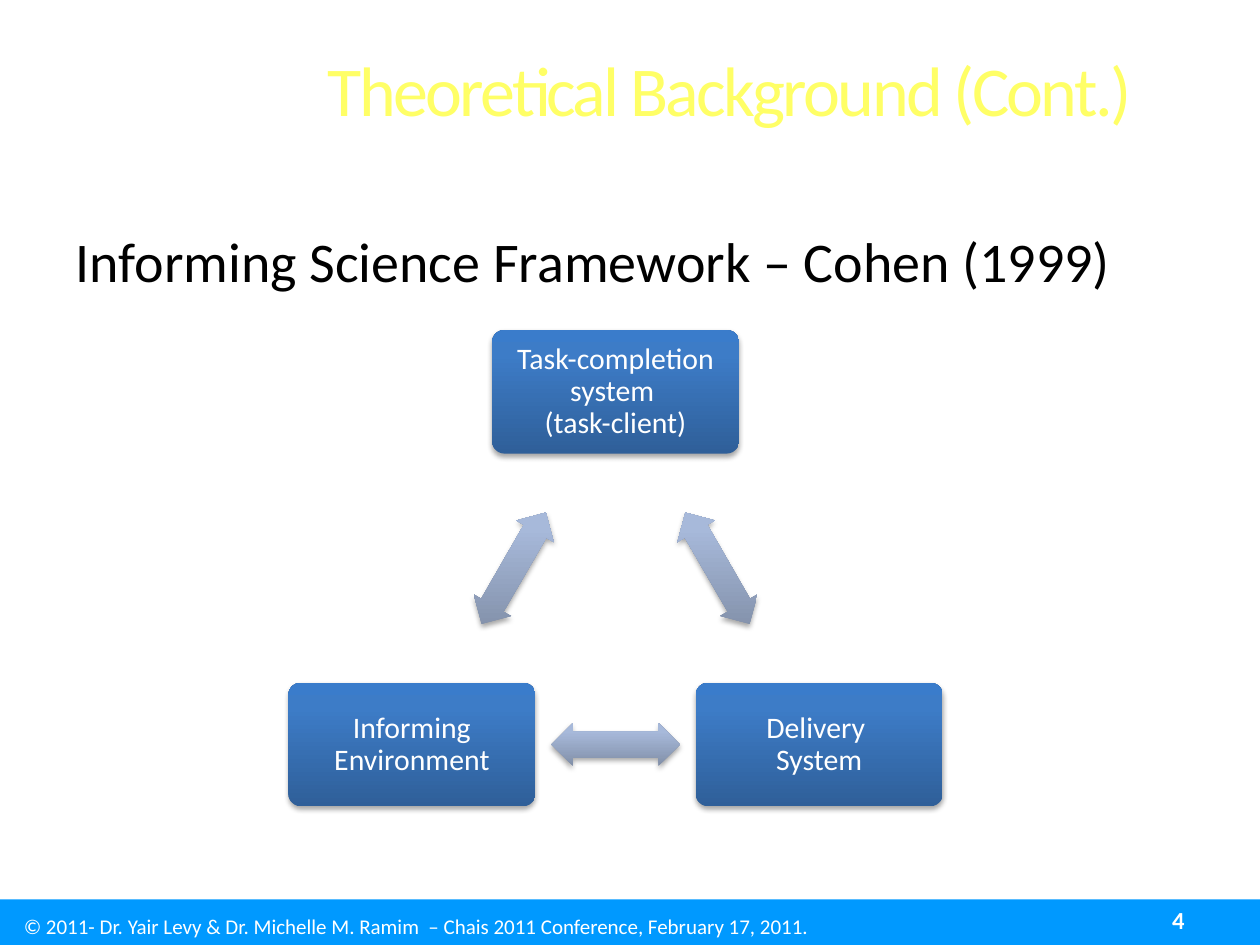
import math

import pptx
import pptx.dml.color
import pptx.enum.shapes
import pptx.enum.text
import pptx.oxml.ns
import pptx.util
from lxml import etree

Cm = pptx.util.Cm
Pt = pptx.util.Pt
RGBColor = pptx.dml.color.RGBColor
MSO_SHAPE = pptx.enum.shapes.MSO_SHAPE
ALIGN = pptx.enum.text.PP_ALIGN
ANCHOR = pptx.enum.text.MSO_ANCHOR
qn = pptx.oxml.ns.qn

# Content
TITLE = "Theoretical Background (Cont.)"
FRAMEWORK = "Informing Science Framework – Cohen (1999)"
COMPONENTS = ["Task-completion system \v(task-client)", "Delivery \vSystem",
              "Informing Environment"]
COPYRIGHT = ("© 2011- Dr. Yair Levy & Dr. Michelle M. Ramim  – "
             "Chais 2011 Conference, February 17, 2011.")
PAGE_NUMBER = "4"

# Style
FONT = "Calibri"
WHITE = RGBColor(0xFF, 0xFF, 0xFF)
BLACK = RGBColor(0, 0, 0)
YELLOW = RGBColor(0xFF, 0xFF, 0x66)
FOOTER_BLUE = RGBColor(0x00, 0x99, 0xFF)
BOX_STOPS = [(0, RGBColor(0x2F, 0x5F, 0x99)), (80, RGBColor(0x3D, 0x7C, 0xC7)),
             (100, RGBColor(0x3A, 0x7C, 0xCB))]
ARROW_STOPS = [(0, RGBColor(0x81, 0x8F, 0xA8)), (80, RGBColor(0xA7, 0xB9, 0xDA)),
               (100, RGBColor(0xA7, 0xBA, 0xDC))]

# Cycle geometry, in cm
CENTER_X, CENTER_Y, RADIUS = 12.41, 12.64, 4.74
BOX_SIZE = (4.98, 2.49)
ARROW_SIZE = (2.59, 0.87)


def write(shape, text, size, color, align=ALIGN.LEFT, anchor=ANCHOR.TOP, bold=False):
    frame = shape.text_frame
    frame.word_wrap = True
    frame.vertical_anchor = anchor
    paragraph = frame.paragraphs[0]
    paragraph.text = text
    paragraph.alignment = align
    font = paragraph.font
    font.name, font.size, font.bold = FONT, Pt(size), bold
    font.color.rgb = color
    return paragraph


def add_text(slide, box, *args, **kwargs):
    return write(slide.shapes.add_textbox(*map(Cm, box)), *args, **kwargs)


def add_shaded(slide, kind, center, size, stops):
    """Shape centred on a point, with an upright gradient and a soft shadow."""
    (x, y), (width, height) = center, size
    shape = slide.shapes.add_shape(kind, Cm(x - width / 2), Cm(y - height / 2),
                                   Cm(width), Cm(height))
    shape.line.fill.background()
    shape.fill.gradient()
    shape.fill.gradient_angle = 90
    gradient = shape._element.spPr.find(qn("a:gradFill"))
    gradient.set("rotWithShape", "0")
    stop_list = gradient.find(qn("a:gsLst"))
    for old_stop in list(stop_list):
        stop_list.remove(old_stop)
    for position, color in stops:
        stop = etree.SubElement(stop_list, qn("a:gs"), pos=str(position * 1000))
        etree.SubElement(stop, qn("a:srgbClr"), val=str(color))

    shape.shadow.inherit = False
    effects = shape._element.spPr.find(qn("a:effectLst"))
    shadow = etree.SubElement(effects, qn("a:outerShdw"), blurRad=str(Pt(3.1)),
                              dist=str(Pt(1.8)), dir="5400000", rotWithShape="0")
    shadow_color = etree.SubElement(shadow, qn("a:srgbClr"), val=str(BLACK))
    etree.SubElement(shadow_color, qn("a:alpha"), val="35000")
    return shape


def add_cycle(slide):
    step = 360 / len(COMPONENTS)
    corners = []
    for i in range(len(COMPONENTS)):
        angle = math.radians(i * step - 90)
        corners.append((CENTER_X + RADIUS * math.cos(angle),
                        CENTER_Y + RADIUS * math.sin(angle)))

    for i, (component, corner) in enumerate(zip(COMPONENTS, corners)):
        box = add_shaded(slide, MSO_SHAPE.ROUNDED_RECTANGLE, corner, BOX_SIZE, BOX_STOPS)
        box.adjustments[0] = 0.1
        frame = box.text_frame
        frame.margin_left = frame.margin_right = Cm(0.25)
        frame.margin_top = frame.margin_bottom = Cm(0.25)
        label = write(box, component, 17, WHITE, ALIGN.CENTER, ANCHOR.MIDDLE)
        label.line_spacing = 0.9

        # Arrow halfway to the next component
        following = corners[(i + 1) % len(corners)]
        middle = [(a + b) / 2 for a, b in zip(corner, following)]
        arrow = add_shaded(slide, MSO_SHAPE.LEFT_RIGHT_ARROW, middle, ARROW_SIZE, ARROW_STOPS)
        arrow.adjustments[0], arrow.adjustments[1] = 0.6, 0.5
        arrow.rotation = step / 2 + i * step


def main():
    deck = pptx.Presentation()
    deck.slide_width, deck.slide_height = Cm(25.4), Cm(19.05)
    slide = deck.slides.add_slide(deck.slide_layouts[5])

    # Footer band
    band = slide.shapes.add_shape(MSO_SHAPE.RECTANGLE, 0, Cm(18.13), Cm(25.4), Cm(0.92))
    band.fill.solid()
    band.fill.fore_color.rgb = FOOTER_BLUE
    band.line.fill.background()
    band.shadow.inherit = False
    add_text(slide, (0.23, 18.29, 24.23, 0.76), COPYRIGHT, 12, WHITE)
    add_text(slide, (18.2, 18.03, 5.93, 1.02), PAGE_NUMBER, 14, WHITE,
             ALIGN.RIGHT, ANCHOR.MIDDLE, bold=True)

    # Title
    title = slide.shapes.title
    title.left, title.top, title.width, title.height = map(Cm, (6.35, 0.2, 19.05, 3.18))
    heading = write(title, TITLE, 40, YELLOW, anchor=ANCHOR.MIDDLE)
    heading.runs[0]._r.get_or_add_rPr().set("spc", "-150")

    # Framework line and diagram
    add_text(slide, (1.27, 4.45, 22.86, 12.57), FRAMEWORK, 32, BLACK)
    add_cycle(slide)

    deck.save("out.pptx")


if __name__ == "__main__":
    main()
